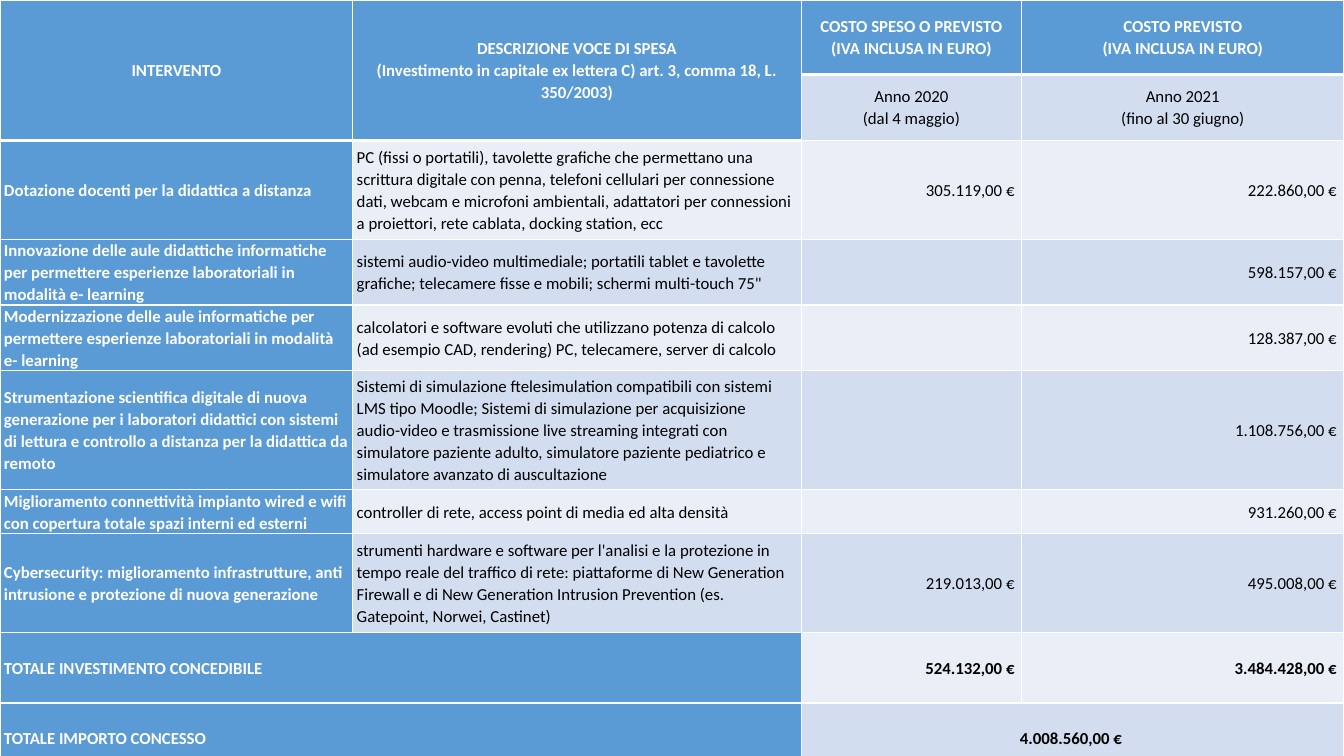
import pptx
import pptx.util
from lxml import etree
from pptx.dml.color import RGBColor
from pptx.enum.text import MSO_ANCHOR, PP_ALIGN
from pptx.oxml.ns import qn
from pptx.util import Cm, Pt


class Theme:
    font = "Calibri"
    size = 12
    spacing = 1.07
    blue = "5B9BD5"
    bands = ("EAEFF7", "D2DEEF")
    white = "FFFFFF"
    black = "000000"
    thin, thick = 1, 3


COL_WIDTHS = [8.89, 11.3, 5.56, 8.12]
ROW_HEIGHTS = [1.88, 1.3, 2.49, 1.63, 1.63, 3, 1.07, 2.49, 1.78, 1.78]
HEADER_ROWS = 2
TOTAL_ROW = 8

ROWS = [
    ["INTERVENTO",
     "DESCRIZIONE VOCE DI SPESA\v(Investimento in capitale ex lettera C) art. 3, comma 18, L. 350/2003)",
     "COSTO SPESO O PREVISTO\v(IVA INCLUSA IN EURO)",
     "COSTO PREVISTO\v(IVA INCLUSA IN EURO)"],
    ["", "", "Anno 2020\v(dal 4 maggio)", "Anno 2021\v(fino al 30 giugno)"],
    ["Dotazione docenti per la didattica a distanza",
     "PC (fissi o portatili), tavolette grafiche che permettano una scrittura digitale con penna, "
     "telefoni cellulari per connessione dati, webcam e microfoni ambientali, adattatori per "
     "connessioni a proiettori, rete cablata, docking station, ecc",
     "305.119,00 €", "222.860,00 €"],
    ["Innovazione delle aule didattiche informatiche per permettere esperienze laboratoriali in "
     "modalità e- learning",
     "sistemi audio-video multimediale; portatili tablet e tavolette grafiche; telecamere fisse e "
     "mobili; schermi multi-touch 75\"",
     "", "598.157,00 €"],
    ["Modernizzazione delle aule informatiche per permettere esperienze laboratoriali in modalità "
     "e- learning",
     "calcolatori e software evoluti che utilizzano potenza di calcolo (ad esempio CAD, rendering) "
     "PC, telecamere, server di calcolo",
     "", "128.387,00 €"],
    ["Strumentazione scientifica digitale di nuova generazione per i laboratori didattici con "
     "sistemi di lettura e controllo a distanza per la didattica da remoto",
     "Sistemi di simulazione ftelesimulation compatibili con sistemi LMS tipo Moodle; Sistemi di "
     "simulazione per acquisizione\vaudio-video e trasmissione live streaming integrati con "
     "simulatore paziente adulto, simulatore paziente pediatrico e simulatore avanzato di "
     "auscultazione",
     "", "1.108.756,00 €"],
    ["Miglioramento connettività impianto wired e wifi con copertura totale spazi interni ed esterni",
     "controller di rete, access point di media ed alta densità",
     "", "931.260,00 €"],
    ["Cybersecurity: miglioramento infrastrutture, anti intrusione e protezione di nuova generazione",
     "strumenti hardware e software per l'analisi e la protezione in tempo reale del traffico di "
     "rete: piattaforme di New Generation Firewall e di New Generation Intrusion Prevention (es. "
     "Gatepoint, Norwei, Castinet)",
     "219.013,00 €", "495.008,00 €"],
    ["TOTALE INVESTIMENTO CONCEDIBILE", "", "524.132,00 €", "3.484.428,00 €"],
    ["TOTALE IMPORTO CONCESSO", "", "4.008.560,00 €", ""],
]


def write(cell, text, color=Theme.black, bold=False, align=PP_ALIGN.LEFT):
    p = cell.text_frame.paragraphs[0]
    p.text = text
    p.alignment = align
    p.line_spacing = Theme.spacing
    for r in p.runs:
        r.font.name = Theme.font
        r.font.size = Pt(Theme.size)
        r.font.bold = bold
        r.font.color.rgb = RGBColor.from_string(color)
    for br in p._p.findall(qn("a:br")):
        etree.SubElement(br, qn("a:rPr"), sz=str(Theme.size * 100))


def set_borders(cell, top, bottom):
    """Draw white borders; top and bottom are widths in points."""
    tcPr = cell._tc.get_or_add_tcPr()
    widths = {"a:lnL": Theme.thin, "a:lnR": Theme.thin, "a:lnT": top, "a:lnB": bottom}
    for i, (tag, width) in enumerate(widths.items()):
        ln = etree.Element(qn(tag), w=str(Pt(width)))
        fill = etree.SubElement(ln, qn("a:solidFill"))
        etree.SubElement(fill, qn("a:srgbClr"), val=Theme.white)
        tcPr.insert(i, ln)


prs = pptx.Presentation()
prs.slide_width, prs.slide_height = Cm(33.87), Cm(19.05)
s = prs.slides.add_slide(prs.slide_layouts[6])

table = s.shapes.add_table(len(ROWS), len(COL_WIDTHS), 0, 0,
                           Cm(sum(COL_WIDTHS)), Cm(sum(ROW_HEIGHTS))).table
for column, width in zip(table.columns, COL_WIDTHS):
    column.width = Cm(width)
for row, height in zip(table.rows, ROW_HEIGHTS):
    row.height = Cm(height)

for i, texts in enumerate(ROWS):
    for j, text in enumerate(texts):
        cell = table.cell(i, j)
        is_amount = text.endswith("€")
        is_label = i == 0 or j == 0 or (j == 1 and (i < HEADER_ROWS or i >= TOTAL_ROW))

        cell.vertical_anchor = MSO_ANCHOR.MIDDLE
        cell.margin_top = cell.margin_bottom = 0
        cell.margin_left = Cm(0.1)
        cell.margin_right = Cm(0.18 if is_amount else 0.1)
        cell.fill.solid()
        cell.fill.fore_color.rgb = RGBColor.from_string(
            Theme.blue if is_label else Theme.bands[i % 2])
        set_borders(cell, Theme.thick if i == 1 else Theme.thin,
                    Theme.thick if i == 0 else Theme.thin)

        if i < HEADER_ROWS or i == len(ROWS) - 1 and is_amount:
            align = PP_ALIGN.CENTER
        else:
            align = PP_ALIGN.RIGHT if is_amount else PP_ALIGN.LEFT
        if text:
            write(cell, text, color=Theme.white if is_label else Theme.black,
                  bold=is_label or i >= TOTAL_ROW, align=align)

for first, last in [((0, 0), (1, 0)), ((0, 1), (1, 1)), ((8, 0), (8, 1)),
                    ((9, 0), (9, 1)), ((9, 2), (9, 3))]:
    table.cell(*first).merge(table.cell(*last))

prs.save("out.pptx")
